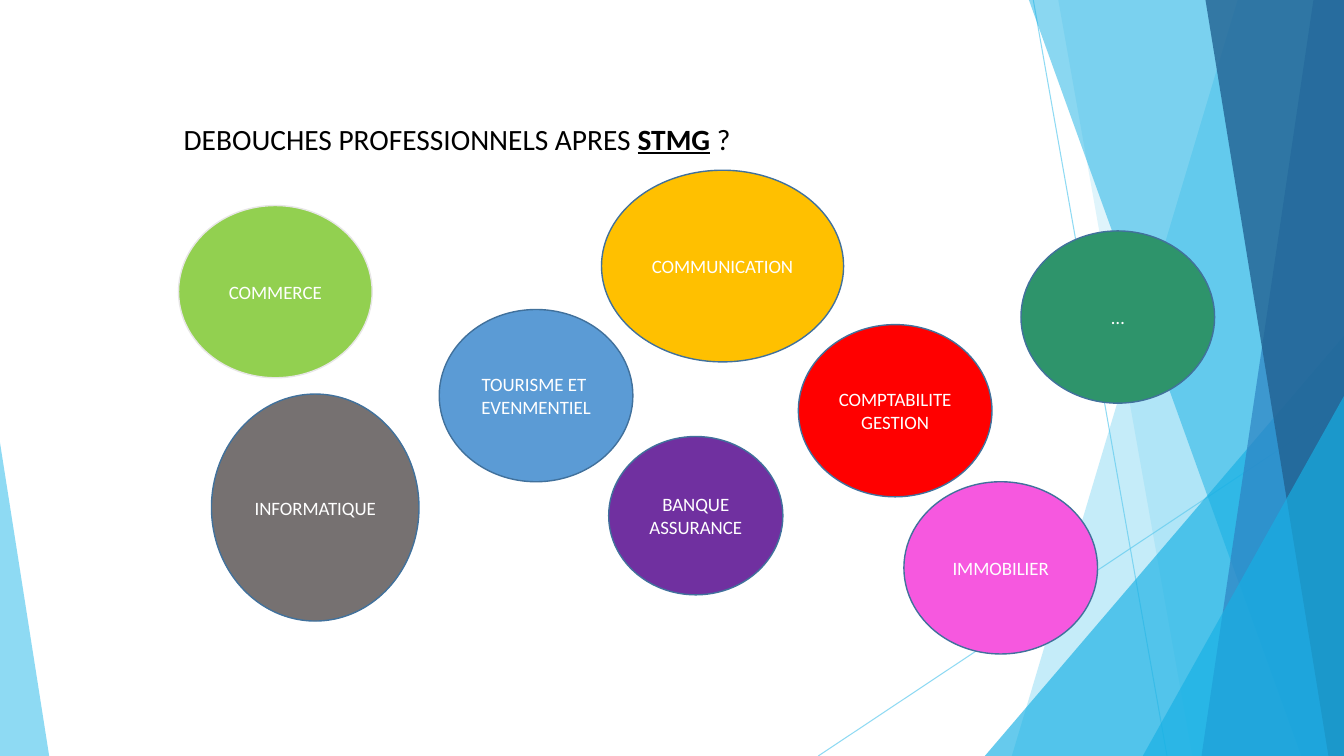
from lxml import etree
from pptx import Presentation, util as u
from pptx.dml.color import RGBColor
from pptx.enum import shapes, text
from pptx.oxml.ns import qn

WIDTH, HEIGHT = 33.87, 19.05
COLOURS = {
    "sky": "5FCBEF", "cyan": "17B0E4", "blue": "2E83C3", "navy": "226292",
    "outline": "41719C", "pale": "E7E6E6", "white": "FFFFFF", "black": "000000",
    "lime": "92D050", "red": "FF0000", "grey": "767171", "purple": "7030A0",
    "amber": "FFC000", "azure": "5B9BD5", "pink": "F658DF", "green": "2E946B",
}
USUAL = (4.88, 4.34)
# label lines, left and top, width and height, fill, outline
CAREERS = [
    (["COMMERCE"], (4.5, 5.18), USUAL, "lime", "pale"),
    (["COMPTABILITE", "GESTION"], (20.12, 8.18), USUAL, "red", "outline"),
    (["INFORMATIQUE"], (5.33, 9.93), (5.23, 5.72), "grey", "outline"),
    (["BANQUE ASSURANCE"], (15.34, 11), (4.39, 3.99), "purple", "outline"),
    (["COMMUNICATION"], (15.16, 4.29), (6.1, 4.83), "amber", "outline"),
    (["TOURISME ET ", "EVENMENTIEL"], (11.07, 7.8), USUAL, "azure", "outline"),
    (["IMMOBILIER"], (22.78, 12.14), USUAL, "pink", "outline"),
    (["…"], (25.73, 5.82), USUAL, "green", "outline"),
]
TITLE = [
    ("DEBOUCHES PROFESSIONNELS APRES ", {}),
    ("STMG", {"bold": True, "underline": True}),
    (" ?", {}),
]


def rgb(name):
    return RGBColor.from_string(COLOURS[name])


def set_all(target, values):
    for name, value in values.items():
        setattr(target, name, value)


def set_opacity(fill_owner, percent):
    colour = next(fill_owner._element.spPr.iter(qn("a:srgbClr")))
    etree.SubElement(colour, qn("a:alpha")).set("val", str(percent * 1000))


def add_span(para, words, size, colour, style=None):
    span = para.add_run()
    span.text = words
    set_all(span.font, {"name": "Calibri", "size": u.Pt(size), **(style or {})})
    span.font.color.rgb = rgb(colour)


def set_frame(frame, anchor):
    set_all(frame, {
        "word_wrap": True, "vertical_anchor": anchor,
        "margin_left": u.Cm(0.24), "margin_right": u.Cm(0.24),
        "margin_top": u.Cm(0.12), "margin_bottom": u.Cm(0.12),
    })


def paint(shape, colour, opacity):
    shape.shadow.inherit = False
    shape.fill.solid()
    shape.fill.fore_color.rgb = rgb(colour)
    shape.line.fill.background()
    set_opacity(shape, opacity)


def add_ray(page, start, end):
    ray = page.shapes.add_connector(
        shapes.MSO_CONNECTOR.STRAIGHT, *map(u.Cm, start + end))
    ray.line.color.rgb = rgb("sky")
    ray.line.width = u.Pt(0.75)
    set_opacity(ray, 70)
    etree.SubElement(ray._element.spPr, qn("a:effectLst"))


def add_panel(page, box, top_x, bottom_x, colour, opacity):
    """Full-height panel with a slanted left side, filling the box to its right."""
    left, top, width, height = box
    right, bottom = left + width, top + height
    corners = [(top_x, top), (right, top), (right, bottom), (bottom_x, bottom)]
    corners = [(u.Cm(x), u.Cm(y)) for x, y in corners]
    builder = page.shapes.build_freeform(*corners[0])
    builder.add_line_segments(corners[1:], close=True)
    paint(builder.convert_to_shape(), colour, opacity)


def add_wedge(page, box, apex, colour, opacity):
    wedge = page.shapes.add_shape(
        shapes.MSO_SHAPE.ISOSCELES_TRIANGLE, *map(u.Cm, box))
    wedge.adjustments[0] = apex
    paint(wedge, colour, opacity)


def add_facets(page, box):
    left, top, width, height = box
    right, bottom = left + width, top + height

    def right_wedge(x, y):
        add_wedge(page, (x, y, right - x, bottom - y), 1, "cyan", 66)

    add_ray(page, (26.04, top), (29.41, bottom))
    add_ray(page, (right, 10.24), (20.62, bottom))
    add_panel(page, box, 31.19, 25.5, "sky", 36)
    add_panel(page, box, 26.67, 30.05, "sky", 20)
    right_wedge(24.82, 8.46)
    add_panel(page, box, 25.93, 32.79, "cyan", 50)
    add_panel(page, box, 33.1, 30.28, "blue", 70)
    add_panel(page, box, 30.38, 33.48, "navy", 80)
    right_wedge(28.8, 9.98)
    add_wedge(page, (left, 11.15, 1.24, bottom - 11.15), 0, "sky", 70)


def add_career(page, box, lines, fill, outline):
    bubble = page.shapes.add_shape(shapes.MSO_SHAPE.OVAL, *map(u.Cm, box))
    bubble.shadow.inherit = False
    bubble.fill.solid()
    bubble.fill.fore_color.rgb = rgb(fill)
    bubble.line.color.rgb = rgb(outline)
    bubble.line.width = u.Pt(1)
    frame = bubble.text_frame
    set_frame(frame, text.MSO_ANCHOR.MIDDLE)
    for index, line in enumerate(lines):
        para = frame.add_paragraph() if index else frame.paragraphs[0]
        para.alignment = text.PP_ALIGN.CENTER
        add_span(para, line, 13.5, "white")


def add_title(page, box):
    title = page.shapes.add_textbox(*map(u.Cm, box))
    set_frame(title.text_frame, text.MSO_ANCHOR.TOP)
    title.text_frame.auto_size = text.MSO_AUTO_SIZE.SHAPE_TO_FIT_TEXT
    for words, style in TITLE:
        add_span(title.text_frame.paragraphs[0], words, 21, "black", style)


def main():
    deck = Presentation()
    deck.slide_width, deck.slide_height = u.Cm(WIDTH), u.Cm(HEIGHT)
    page = deck.slides.add_slide(deck.slide_layouts[6])
    add_facets(page, (0, 0, WIDTH, HEIGHT))
    for lines, place, size, fill, outline in CAREERS:
        add_career(page, place + size, lines, fill, outline)
    add_title(page, (4.39, 2.92, 20.09, 1.14))
    deck.save("out.pptx")


if __name__ == "__main__":
    main()
